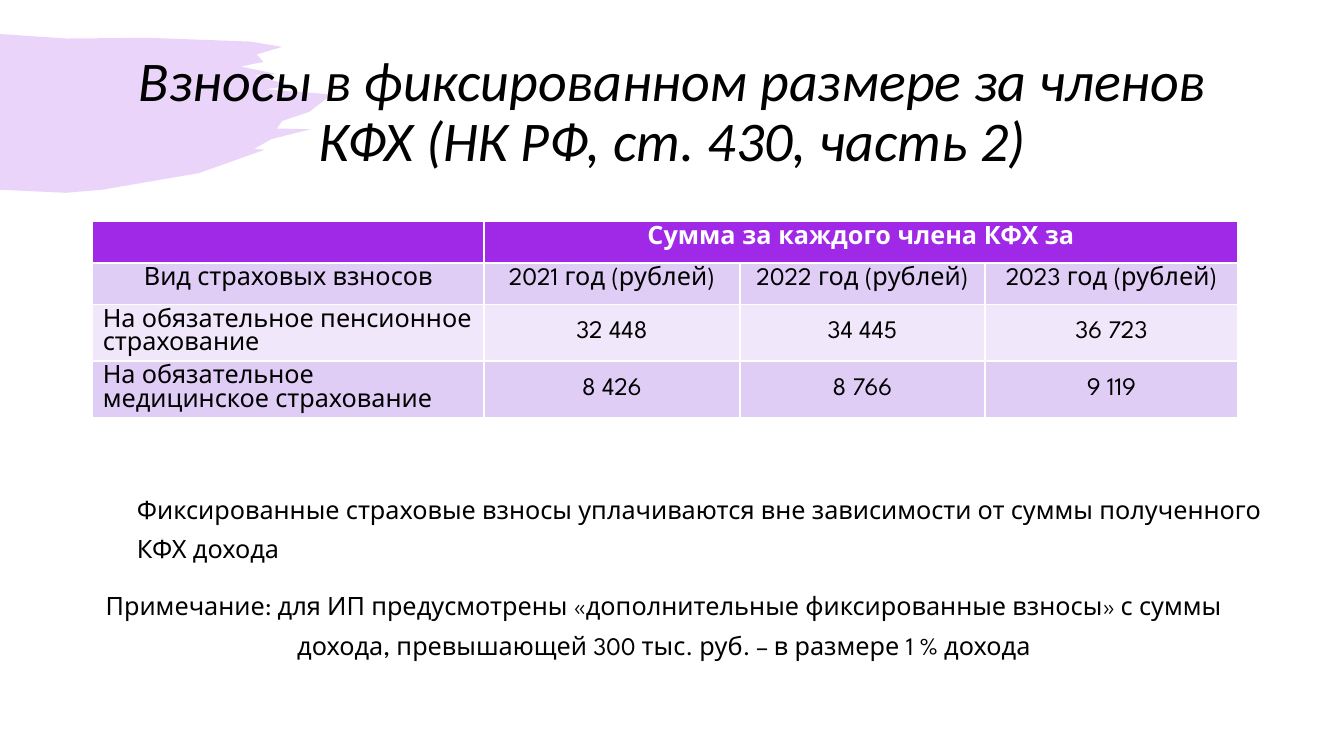
from dataclasses import dataclass

from lxml import etree
from pptx import Presentation
from pptx import util as u
from pptx.dml.color import RGBColor
from pptx.enum import text
from pptx.oxml.ns import qn

PURPLE = RGBColor(0x9F, 0x29, 0xE7)
LILAC = RGBColor(0xDF, 0xCD, 0xF6)
PALE_LILAC = RGBColor(0xF0, 0xE8, 0xFA)
WHITE = RGBColor(0xFF, 0xFF, 0xFF)
BLACK = RGBColor(0, 0, 0)

SLIDE_WIDTH, SLIDE_HEIGHT = u.Inches(13.33), u.Inches(7.5)
LEFT, CENTER = text.PP_ALIGN.LEFT, text.PP_ALIGN.CENTER
TOP, MIDDLE = text.MSO_ANCHOR.TOP, text.MSO_ANCHOR.MIDDLE
GROW, FIXED = text.MSO_AUTO_SIZE.SHAPE_TO_FIT_TEXT, text.MSO_AUTO_SIZE.NONE
BODY_FONT = {"name": "League Spartan", "size": u.Pt(18), "bold": False}


@dataclass(frozen=True)
class Frame:
    """A rectangle in percent of the slide's width and height."""
    left: float
    top: float
    width: float
    height: float

    def emu(self) -> tuple:
        return (across(self.left), down(self.top),
                across(self.width), down(self.height))


@dataclass(frozen=True)
class Caption:
    words: str
    frame: Frame
    align: int = LEFT
    anchor: int = TOP
    autosize: int = GROW
    line_spacing: float = 1.3


@dataclass(frozen=True)
class TableRow:
    words: tuple
    height: float
    fill: RGBColor
    anchor: int
    first_align: int = CENTER
    color: RGBColor = BLACK
    bold: bool = False


TITLE_FONT = {"name": "Calibri", "size": u.Pt(40), "italic": True}
TITLE = Caption("Взносы в фиксированном размере за членов КФХ (НК РФ, ст. 430, часть 2)",
                Frame(6.9, 5.33, 86.27, 19.33), CENTER, MIDDLE, FIXED, 0.9)
NOTES = (
    Caption("Фиксированные страховые взносы уплачиваются вне зависимости "
            "от суммы полученного КФХ дохода",
            Frame(9.45, 63.47, 86.27, 9.47)),
    Caption("Примечание: для ИП предусмотрены «дополнительные фиксированные взносы» "
            "с суммы дохода, превышающей 300 тыс. руб. – в размере 1 % дохода",
            Frame(4.28, 76.27, 90.25, 9.47), CENTER),
)

TABLE_FRAME = Frame(6.9, 29.33, 85.22, 25.94)
COLUMN_WIDTHS = (29.11, 19.05, 18.23, 18.83)
LOW_ROW, TALL_ROW = 5.47, 7.5
TABLE_ROWS = (
    TableRow(("", "Сумма за каждого члена КФХ за", "", ""),
             LOW_ROW, PURPLE, TOP, color=WHITE, bold=True),
    TableRow(("Вид страховых взносов",
              *(f"{year} год (рублей)" for year in range(2021, 2024))),
             LOW_ROW, LILAC, TOP),
    TableRow(("На обязательное пенсионное страхование", "32 448", "34 445", "36 723"),
             TALL_ROW, PALE_LILAC, MIDDLE, LEFT),
    TableRow(("На обязательное медицинское страхование", "8 426", "8 766", "9 119"),
             TALL_ROW, LILAC, MIDDLE, LEFT),
)

# Brush stroke outline in percent of the slide, clockwise from the top left.
BRUSH_OUTLINE = (
    (0, 4.5), (5, 5.1), (11, 5), (18.6, 5.5), (21, 6.2),
    (19.1, 7.2), (19.6, 8.2), (17.9, 8.8), (20.6, 9.8), (18.9, 10),
    (21.7, 11.3), (19.8, 11.8), (24.7, 12.5), (23, 14.8), (21, 16),
    (20.6, 17), (23.1, 17.1), (20.2, 18.4), (18.9, 19.7), (19.7, 19.8),
    (14.8, 22.9), (7.6, 25.1), (4.9, 25.5), (0, 25.1),
)


def across(percent: float) -> int:
    return round(SLIDE_WIDTH * percent / 100)


def down(percent: float) -> int:
    return round(SLIDE_HEIGHT * percent / 100)


def draw_brush_stroke(page) -> None:
    start, *rest = [(across(x), down(y)) for x, y in BRUSH_OUTLINE]
    builder = page.shapes.build_freeform(*start, scale=1.0)
    builder.add_line_segments(rest, close=True)
    brush = builder.convert_to_shape()
    brush.shadow.inherit = False
    brush.line.fill.background()
    brush.fill.solid()
    brush.fill.fore_color.rgb = PURPLE
    color = brush.element.spPr.find(f"{qn('a:solidFill')}/{qn('a:srgbClr')}")
    etree.SubElement(color, qn("a:alpha"), val="20000")


def write(para, words: str, align: int, font: dict, color: RGBColor) -> None:
    para.alignment = align
    span = para.add_run()
    span.text = words
    for name, value in font.items():
        setattr(span.font, name, value)
    span.font.color.rgb = color


def draw_caption(page, caption: Caption, font: dict) -> None:
    box = page.shapes.add_textbox(*caption.frame.emu())
    settings = {"word_wrap": True, "vertical_anchor": caption.anchor,
                "auto_size": caption.autosize}
    for name, value in settings.items():
        setattr(box.text_frame, name, value)
    para = box.text_frame.paragraphs[0]
    para.line_spacing = caption.line_spacing
    write(para, caption.words, caption.align, font, BLACK)


def draw_contributions(page) -> None:
    table = page.shapes.add_table(len(TABLE_ROWS), len(COLUMN_WIDTHS),
                                  *TABLE_FRAME.emu()).table
    for column, width in zip(table.columns, COLUMN_WIDTHS):
        column.width = across(width)
    for index, row in enumerate(TABLE_ROWS):
        table.rows[index].height = down(row.height)
        for number, words in enumerate(row.words):
            cell = table.cell(index, number)
            cell.fill.solid()
            cell.fill.fore_color.rgb = row.fill
            cell.vertical_anchor = row.anchor
            if words:
                write(cell.text_frame.paragraphs[0], words,
                      CENTER if number else row.first_align,
                      {**BODY_FONT, "bold": row.bold}, row.color)
    table.cell(0, 1).merge(table.cell(0, len(COLUMN_WIDTHS) - 1))


def main() -> None:
    deck = Presentation()
    deck.slide_width, deck.slide_height = SLIDE_WIDTH, SLIDE_HEIGHT
    page = deck.slides.add_slide(deck.slide_layouts[6])
    draw_brush_stroke(page)
    draw_caption(page, TITLE, TITLE_FONT)
    draw_contributions(page)
    for note in NOTES:
        draw_caption(page, note, BODY_FONT)
    deck.save("out.pptx")


if __name__ == "__main__":
    main()
